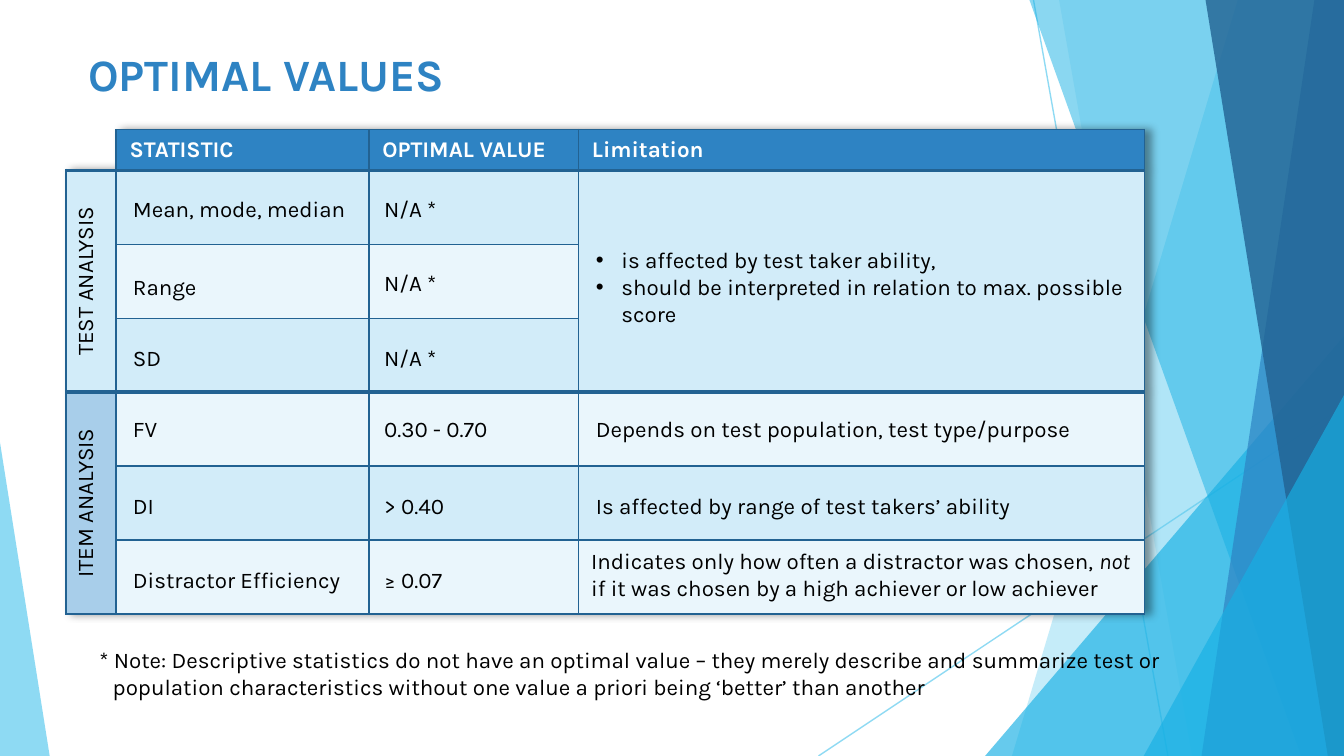
from pptx import Presentation
from pptx.dml.color import RGBColor
from pptx.enum.shapes import MSO_CONNECTOR as Connector, MSO_SHAPE as Shape
from pptx.enum.text import MSO_ANCHOR as Anchor, MSO_AUTO_SIZE as AutoSize, PP_ALIGN as Align
from pptx.oxml import parse_xml
from pptx.oxml.ns import nsdecls, qn
from pptx.util import Emu, Pt
from lxml.etree import SubElement

PX = 4572  # 200 px to the inch
WIDTH, HEIGHT = 2000, 1125
FONT = "Karla"
NO_STYLE = "{2D5ABB26-0587-4C30-8999-92F81FD0307C}"
COLORS = {
    "sky": "5FCBEF", "cyan": "17B0E4", "blue": "2E83C3", "navy": "226292",
    "row_dark": "D2ECF9", "row_light": "EAF6FC", "item": "A8CEEA",
    "white": "FFFFFF", "black": "000000",
}

# Facets in stacking order: (kind, geometry, colour, opacity)
FACETS = [
    ("band", (1842, 1506), "sky", 36),
    ("band", (1576, 1774), "sky", 20),
    ("triangle", (1466, 500, 534, 625, 1), "cyan", 66),
    ("band", (1532, 1936), "cyan", 50),
    ("band", (1956, 1788), "blue", 70),
    ("band", (1794, 1976), "navy", 80),
    ("triangle", (1702, 588, 298, 537, 1), "cyan", 66),
    ("triangle", (0, 658, 74, 467, 0), "sky", 70),
]
RAYS = [(1538, 0, 1738, HEIGHT), (WIDTH, 604, 1218, HEIGHT)]

COLUMNS = [75, 376, 312, 842]
ROWS = [60] + [110] * 6
HEADERS = ["STATISTIC", "OPTIMAL VALUE", "Limitation"]
MERGES = [(1, 0), (1, 3), (4, 0)]  # each spans three rows
GROUPS = {(1, 0): "TEST ANALYSIS", (4, 0): "ITEM ANALYSIS"}
STATISTICS = [  # name, its top, optimal value, its top
    ("Mean, mode, median", 280, "N/A *", 280),
    ("Range", 397, "N/A *", 391),
    ("SD", 502, "N/A *", 502),
    ("FV", 608, "0.30 - 0.70", 608),
    ("DI", 723, "> 0.40", 723),
    ("Distractor Efficiency", 833, "≥ 0.07", 833),
]
LIMITATIONS = [
    ((867, 608, 806, 60), [["Depends on test population, test type/purpose"]]),
    ((867, 723, 806, 60), [["Is affected by range of test takers’ ability"]]),
    ((860, 805, 844, 100), [["Indicates only how often a distractor was chosen, ",
                             ("not", {"italic": True}),
                             " if it was chosen by a high achiever or low achiever"]]),
]
CAVEATS = [["is affected by test taker ability,"],
           ["should be interpreted in relation to max. possible score"]]
NOTE = ("* Note: Descriptive statistics do not have an optimal value – they merely describe "
        "and summarize test or population characteristics without one value a priori being "
        "‘better’ than another")


def px(*lengths):
    return [Emu(length * PX) for length in lengths]


def rgb(name):
    return RGBColor.from_string(COLORS[name])


def set_alpha(fill_parent, percent):
    """Make the solid fill found under an element partly transparent."""
    color = fill_parent.find(qn("a:solidFill"))[0]
    SubElement(color, qn("a:alpha"), val=str(percent * 1000))


def add_ray(page, ends):
    ray = page.shapes.add_connector(Connector.STRAIGHT, *px(*ends))
    ray.line.color.rgb = rgb("sky")
    ray.line.width = Pt(0.75)
    properties = ray.element.spPr
    set_alpha(properties.find(qn("a:ln")), 70)
    SubElement(properties, qn("a:effectLst"))


def add_facet(page, kind, geometry, color, opacity):
    """Add a triangle, or a band from a slanted left edge to the slide's right edge."""
    if kind == "band":
        top_x, bottom_x = geometry
        builder = page.shapes.build_freeform(top_x, 0, scale=PX)
        builder.add_line_segments([(WIDTH, 0), (WIDTH, HEIGHT), (bottom_x, HEIGHT)], close=True)
        facet = builder.convert_to_shape()
    else:
        *bounds, apex = geometry
        facet = page.shapes.add_shape(Shape.ISOSCELES_TRIANGLE, *px(*bounds))
        facet.adjustments[0] = apex
    facet.shadow.inherit = False
    facet.fill.solid()
    facet.fill.fore_color.rgb = rgb(color)
    facet.line.fill.background()
    set_alpha(facet.element.spPr, opacity)


def add_span(para, text, color="black", size=12, **formats):
    span = para.add_run()
    span.text = text
    span.font.color.rgb = rgb(color)
    for name, value in {"name": FONT, "size": Pt(size), **formats}.items():
        setattr(span.font, name, value)


def add_text(page, bounds, paragraphs, indent=0, bullet=None, grow=True, **formats):
    """Add a text box; a span is a string or a (string, formats) pair."""
    box = page.shapes.add_textbox(*px(*bounds))
    frame = box.text_frame
    frame.word_wrap = True
    frame.auto_size = AutoSize.SHAPE_TO_FIT_TEXT if grow else AutoSize.NONE
    for index, spans in enumerate(paragraphs):
        para = frame.add_paragraph() if index else frame.paragraphs[0]
        if indent:
            properties = para._p.get_or_add_pPr()
            properties.set("marL", str(indent * PX))
            properties.set("indent", str(-indent * PX))
            if bullet:
                SubElement(properties, qn("a:buFont"), typeface="Arial")
                SubElement(properties, qn("a:buChar"), char=bullet)
        for span in spans:
            text, extra = (span, {}) if isinstance(span, str) else span
            add_span(para, text, **{**formats, **extra})


def border_widths(row, column):
    """Give a cell's left, right, top and bottom border widths in points."""
    last_row = row + 2 if (row, column) in MERGES else row
    corner = (row, column) == (0, 0)
    return {
        "L": 0 if corner else 1.5 if column == 1 and row < 4 else 1,
        "R": 1.5 if column == 0 and row < 4 else 1,
        "T": 0 if corner else 2.25 if row in (1, 4) else 1,
        "B": 2.25 if last_row in (0, 3) else 1,
    }


def set_borders(cell, widths):
    properties = cell._tc.get_or_add_tcPr()
    for index, (side, width) in enumerate(widths.items()):
        paint = (f'<a:solidFill><a:srgbClr val="{COLORS["navy"]}"/></a:solidFill>'
                 if width else "<a:noFill/>")
        properties.insert(index, parse_xml(
            f'<a:ln{side} {nsdecls("a")} w="{Pt(width)}">{paint}</a:ln{side}>'))


def fill_color(row, column):
    if row == 0:
        return "blue" if column else None
    if (row, column) == (4, 0):
        return "item"
    return "row_dark" if row in (1, 3, 5) else "row_light"


def format_cell(cell, row, column):
    color = fill_color(row, column)
    if color:
        cell.fill.solid()
        cell.fill.fore_color.rgb = rgb(color)
    else:
        cell.fill.background()
    set_borders(cell, border_widths(row, column))
    cell.vertical_anchor = Anchor.MIDDLE
    para = cell.text_frame.paragraphs[0]
    if row == 0 and column:
        add_span(para, HEADERS[column - 1], "white", bold=True)
    elif (row, column) in GROUPS:
        para.alignment = Align.CENTER
        add_span(para, GROUPS[row, column])
        cell._tc.tcPr.set("vert", "vert270")
    else:
        SubElement(para._p, qn("a:endParaRPr"), sz="1200")


def add_statistics_table(page):
    bounds = px(98, 193, sum(COLUMNS), sum(ROWS))
    table = page.shapes.add_table(len(ROWS), len(COLUMNS), *bounds).table
    table.first_row = table.horz_banding = False
    properties = table._tbl.tblPr
    properties.find(qn("a:tableStyleId")).text = NO_STYLE
    properties.insert(0, parse_xml(
        f'<a:effectLst {nsdecls("a")}><a:outerShdw blurRad="50800" dist="38100" dir="0" '
        'algn="l" rotWithShape="0"><a:srgbClr val="000000"><a:alpha val="40000"/></a:srgbClr>'
        '</a:outerShdw></a:effectLst>'))
    for column, width in zip(table.columns, px(*COLUMNS)):
        column.width = width
    for row, height in zip(table.rows, px(*ROWS)):
        row.height = height
    for row, column in MERGES:
        table.cell(row, column).merge(table.cell(row + 2, column))
    for row in range(len(ROWS)):
        for column in range(len(COLUMNS)):
            cell = table.cell(row, column)
            if not cell.is_spanned:
                format_cell(cell, row, column)


def main():
    deck = Presentation()
    deck.slide_width, deck.slide_height = px(WIDTH, HEIGHT)
    page = deck.slides.add_slide(deck.slide_layouts[6])
    for ends in RAYS:
        add_ray(page, ends)
    for facet in FACETS:
        add_facet(page, *facet)
    add_text(page, (112, 60, 1410, 112), [["OPTIMAL VALUES"]], grow=False,
             color="blue", size=24, bold=True)
    add_statistics_table(page)
    add_text(page, (128, 952, 1670, 100), [[NOTE]], indent=20)
    for name, name_top, value, value_top in STATISTICS:
        add_text(page, (178, name_top, 358, 60), [[name]])
        add_text(page, (552, value_top, 264, 60), [[value]])
    for bounds, paragraphs in LIMITATIONS:
        add_text(page, bounds, paragraphs)
    add_text(page, (867, 357, 838, 142), CAVEATS, indent=38, bullet="•")
    deck.save("out.pptx")


if __name__ == "__main__":
    main()
